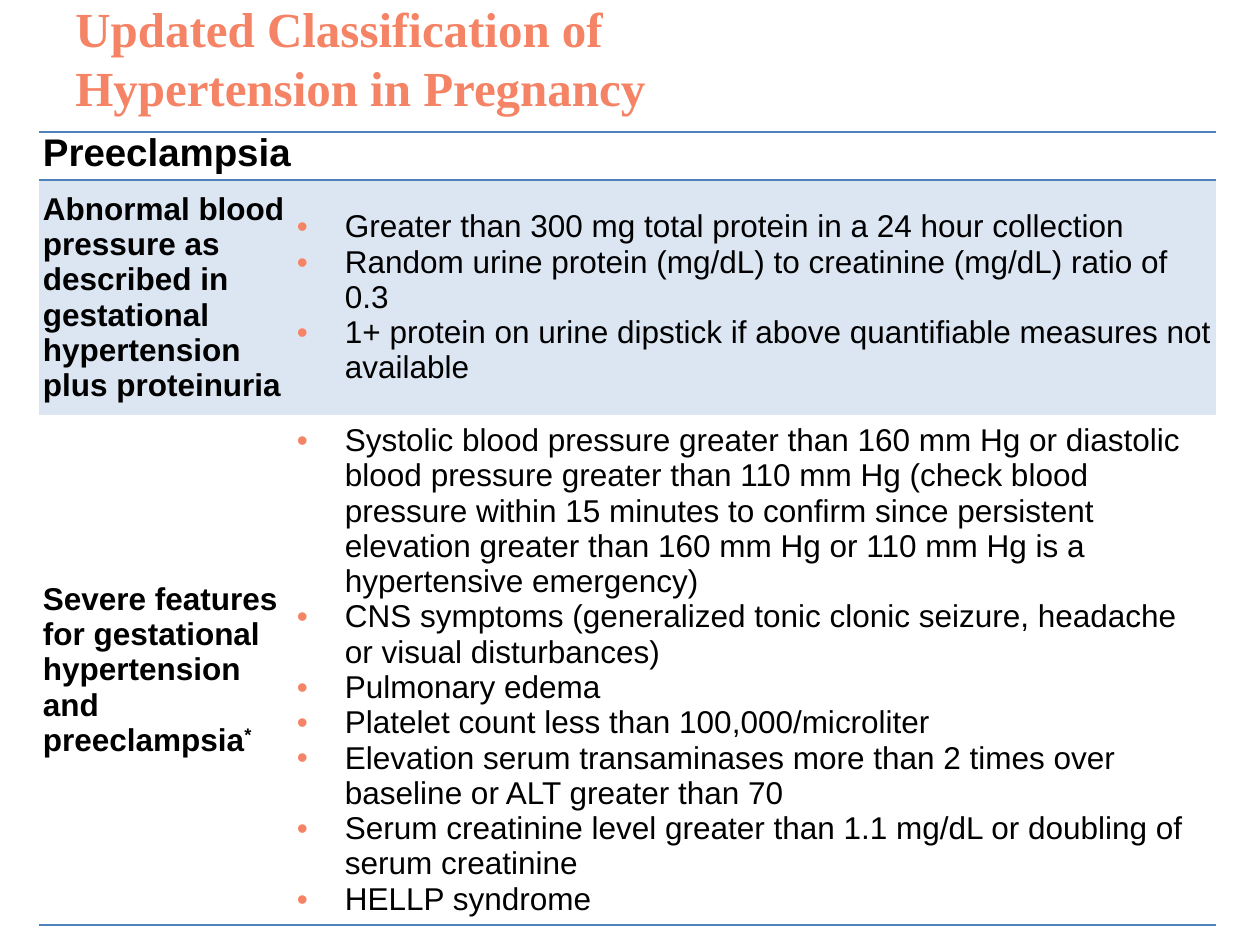
from lxml import etree
from pptx import Presentation
from pptx.dml.color import RGBColor
from pptx.enum.text import MSO_ANCHOR
from pptx.oxml.ns import qn
from pptx.util import Pt

MIDDLE, TOP = MSO_ANCHOR.MIDDLE, MSO_ANCHOR.TOP
EMU_PER_PX = 914400 / 126
NO_STYLE = "{2D5ABB26-0587-4C30-8999-92F81FD0307C}"
COLORS = {"coral": "F58466", "blue": "4F81BD", "band": "DCE6F2", "black": "000000"}

HEADING = {"name": "Arial", "size": Pt(22), "bold": True}
LABEL = {"name": "Arial", "size": Pt(18), "bold": True}
BODY = {"name": "Arial", "size": Pt(18), "bold": False}
TITLE = {"name": "Times New Roman", "size": Pt(28), "bold": True}

COLUMNS = (254, 923)
ROWS = (48, 235, 510)
PROTEINURIA = [
    "Greater than 300 mg total protein in a 24 hour collection",
    "Random urine protein (mg/dL) to creatinine (mg/dL) ratio of 0.3",
    "1+ protein on urine dipstick if above quantifiable measures not available",
]
SEVERE_FEATURES = [
    "Systolic blood pressure greater than 160 mm Hg or diastolic blood pressure "
    "greater than 110 mm Hg (check blood pressure within 15 minutes to confirm since "
    "persistent elevation greater than 160 mm Hg or 110 mm Hg is a hypertensive emergency)",
    "CNS symptoms (generalized tonic clonic seizure, headache or visual disturbances)",
    "Pulmonary edema",
    "Platelet count less than 100,000/microliter",
    "Elevation serum transaminases more than 2 times over baseline or ALT greater than 70",
    "Serum creatinine level greater than 1.1 mg/dL or doubling of serum creatinine",
    "HELLP syndrome",
]


def px(n):
    return round(n * EMU_PER_PX)


def set_font(font, values, color="black"):
    for name, value in values.items():
        setattr(font, name, value)
    font.color.rgb = RGBColor.from_string(COLORS[color])


def add_run(p, text, values, color="black"):
    r = p.add_run()
    r.text = text
    set_font(r.font, values, color)
    return r


def add_color(parent, color):
    etree.SubElement(parent, qn("a:srgbClr"), val=COLORS[color])


def add_bullet(p):
    pPr = p._p.get_or_add_pPr()
    pPr.set("marL", str(px(48)))
    pPr.set("indent", str(-px(48)))
    add_color(etree.SubElement(pPr, qn("a:buClr")), "coral")
    etree.SubElement(pPr, qn("a:buFont"), typeface="Arial")
    etree.SubElement(pPr, qn("a:buChar"), char="•")


def add_border(cell, side):
    line = etree.SubElement(cell._tc.get_or_add_tcPr(), qn(f"a:ln{side}"), w=str(Pt(1)))
    add_color(etree.SubElement(line, qn("a:solidFill")), "blue")


def format_cell(cell, anchor, sides="", band=False):
    margins = {"margin_left": px(4), "margin_right": px(4), "margin_top": 0, "margin_bottom": 0}
    for name, value in margins.items():
        setattr(cell, name, value)
    cell.vertical_anchor = anchor
    for side in sides:
        add_border(cell, side)
    if band:
        cell.fill.solid()
        cell.fill.fore_color.rgb = RGBColor.from_string(COLORS["band"])
    else:
        cell.fill.background()


def fill_bullets(cell, items):
    tf = cell.text_frame
    for i, item in enumerate(items):
        p = tf.add_paragraph() if i else tf.paragraphs[0]
        add_bullet(p)
        add_run(p, item, BODY)


def add_title(s):
    tf = s.shapes.add_textbox(px(63), px(-21), px(1134), px(157)).text_frame
    tf.word_wrap = True
    tf.vertical_anchor = MIDDLE
    p = tf.paragraphs[0]
    add_run(p, "Updated Classification of ", TITLE, "coral")
    p.add_line_break()
    add_run(p, "Hypertension in Pregnancy", TITLE, "coral")


def add_classification(s):
    table = s.shapes.add_table(len(ROWS), len(COLUMNS), px(39), px(132),
                               px(sum(COLUMNS)), px(sum(ROWS))).table
    table._tbl.tblPr.find(qn("a:tableStyleId")).text = NO_STYLE
    table.first_row = table.horz_banding = False
    for column, width in zip(table.columns, COLUMNS):
        column.width = px(width)
    for row, height in zip(table.rows, ROWS):
        row.height = px(height)

    table.cell(0, 0).merge(table.cell(0, 1))
    for col in range(len(COLUMNS)):
        format_cell(table.cell(0, col), TOP, "TB")
        format_cell(table.cell(1, col), MIDDLE, band=True)
        format_cell(table.cell(2, col), MIDDLE, "B")

    labels = [
        ("Preeclampsia", HEADING),
        ("Abnormal blood pressure as described in gestational hypertension plus proteinuria", LABEL),
        ("Severe features for gestational hypertension and preeclampsia", LABEL),
    ]
    for row, (text, values) in enumerate(labels):
        p = table.cell(row, 0).text_frame.paragraphs[0]
        add_run(p, text, values)
    star = add_run(p, "*", LABEL)
    star._r.get_or_add_rPr().set("baseline", "30000")

    fill_bullets(table.cell(1, 1), PROTEINURIA)
    fill_bullets(table.cell(2, 1), SEVERE_FEATURES)


def main():
    prs = Presentation()
    prs.slide_width, prs.slide_height = px(1260), px(945)
    s = prs.slides.add_slide(prs.slide_layouts[6])
    add_classification(s)
    add_title(s)
    prs.save("out.pptx")


if __name__ == "__main__":
    main()
